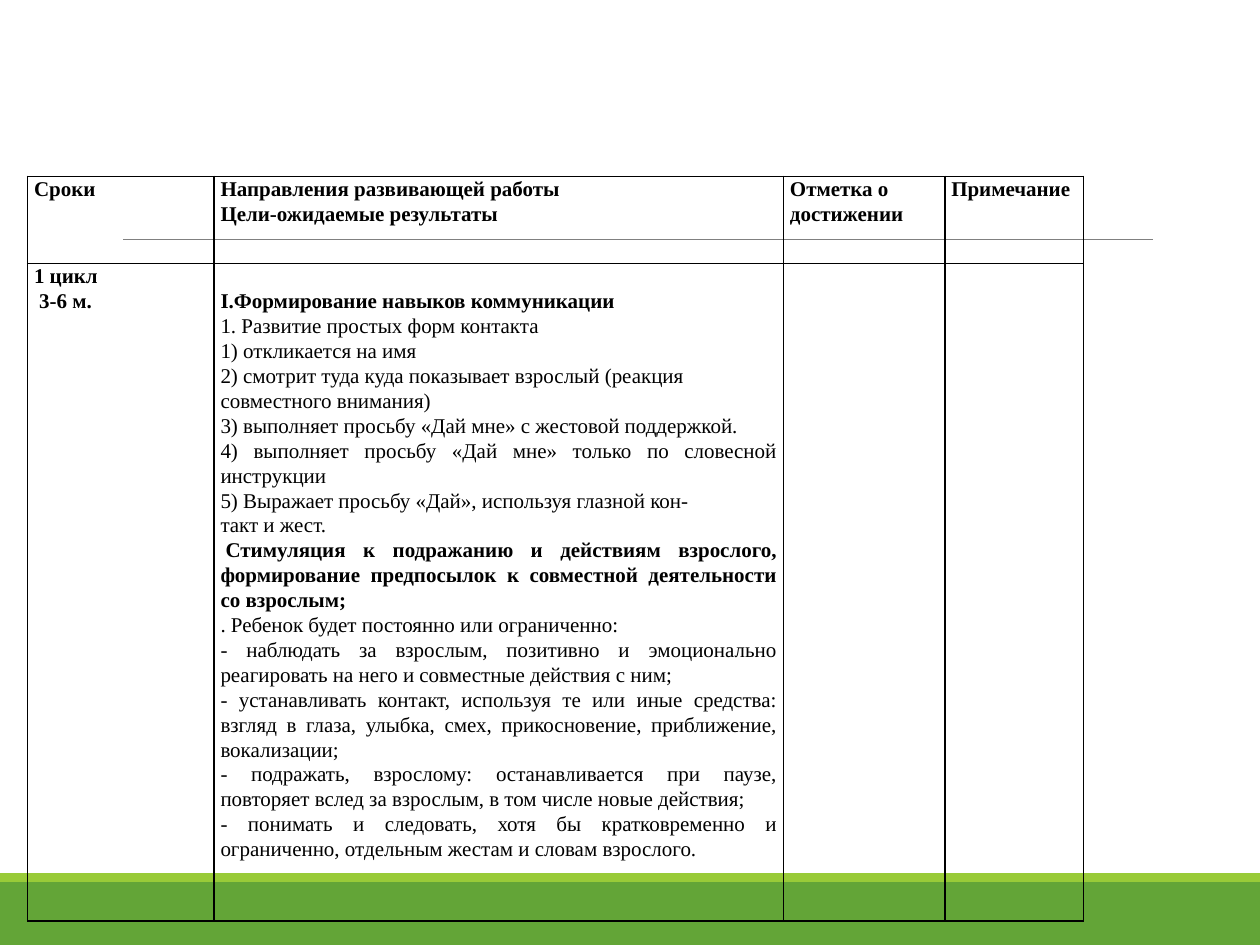
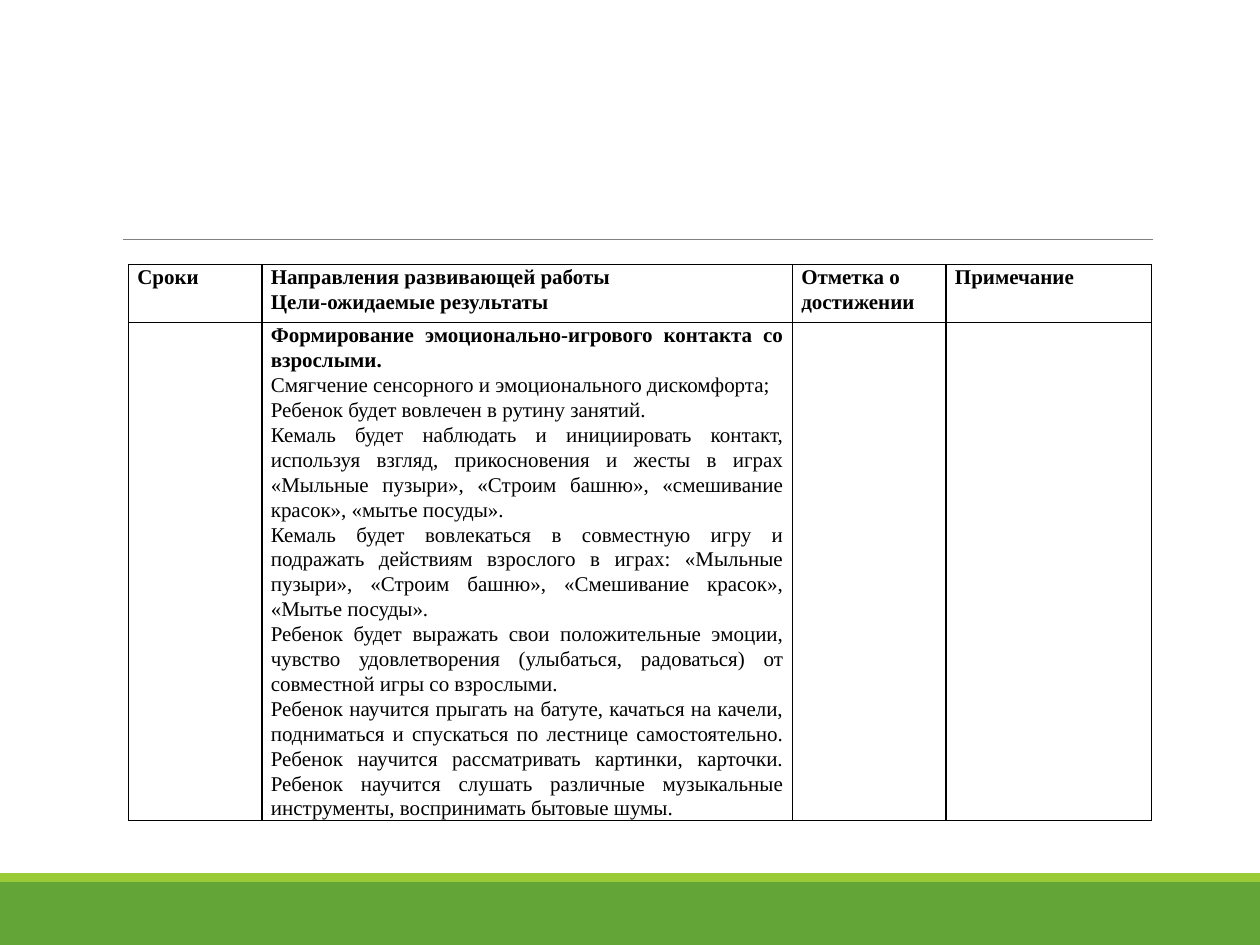
from lxml import etree
from pptx import Presentation
from pptx.dml.color import RGBColor
from pptx.enum.shapes import MSO_CONNECTOR, MSO_SHAPE
from pptx.enum.text import PP_ALIGN
from pptx.oxml.ns import qn
from pptx.util import Inches, Pt

RECTANGLE = MSO_SHAPE.RECTANGLE
STRAIGHT = MSO_CONNECTOR.STRAIGHT
LEFT, JUSTIFY = PP_ALIGN.LEFT, PP_ALIGN.JUSTIFY

COLORS = {"band": "63A537", "stripe": "99CB38", "rule": "808080", "ink": "000000"}
CELL_FONT = {"name": "Times New Roman", "size": Pt(12)}
BLANK_LAYOUT = 6
BORDER_WIDTH = Pt(1)
LINE_SPACING = 1.07
FIRST_LINE_INDENT = Inches(0.04)

HEADER = [
    ["Сроки"],
    ["Направления развивающей работы", "Цели-ожидаемые результаты"],
    ["Отметка о достижении"],
    ["Примечание"],
]

# Paragraphs listed in "bold" are headings, those in "indented" start a little to the right
TABLES = [
    {
        "left": 0.22, "top": 1.4, "side_margin": 0.05, "goals_margin": 0.2,
        "columns": [1.48, 4.52, 1.28, 1.1], "rows": [0.69, 5.22],
        "period": ["1 цикл", "3-6 м."],
        "goals": [
            "I.Формирование навыков коммуникации",
            "1. Развитие простых форм контакта",
            "1) откликается на имя",
            "2) смотрит туда куда показывает взрослый (реакция",
            "совместного внимания)",
            "3) выполняет просьбу «Дай мне» с жестовой поддержкой.",
            "4) выполняет просьбу «Дай мне» только по словесной инструкции",
            "5) Выражает просьбу «Дай», используя глазной кон-",
            "такт и жест.",
            "Стимуляция к подражанию и действиям взрослого, формирование "
            "предпосылок к совместной деятельности со взрослым;",
            ". Ребенок будет постоянно или ограниченно:",
            "- наблюдать за взрослым, позитивно и эмоционально реагировать "
            "на него и совместные действия с ним;",
            "- устанавливать контакт, используя те или иные средства: взгляд в глаза, "
            "улыбка, смех, прикосновение, приближение, вокализации;",
            "- подражать, взрослому: останавливается при паузе, повторяет вслед "
            "за взрослым, в том числе новые действия;",
            "- понимать и следовать, хотя бы кратковременно и ограниченно, "
            "отдельным жестам и словам взрослого.",
        ],
        "bold": [0, 9], "indented": [9],
    },
    {
        "left": 1.02, "top": 2.1, "side_margin": 0.07, "goals_margin": 0,
        "columns": [1.06, 4.21, 1.22, 1.63], "rows": [0.46, 3.95],
        "period": [],
        "goals": [
            "Формирование эмоционально-игрового контакта со взрослыми.",
            "Смягчение сенсорного и эмоционального дискомфорта;",
            "Ребенок будет вовлечен в рутину занятий.",
            "Кемаль будет наблюдать и инициировать контакт, используя взгляд, "
            "прикосновения и жесты в играх «Мыльные пузыри», «Строим башню», "
            "«смешивание красок», «мытье посуды».",
            "Кемаль будет вовлекаться в совместную игру и подражать действиям "
            "взрослого в играх: «Мыльные пузыри», «Строим башню», "
            "«Смешивание красок», «Мытье посуды».",
            "Ребенок будет выражать свои положительные эмоции, чувство удовлетворения "
            "(улыбаться, радоваться) от совместной игры со взрослыми.",
            "Ребенок научится прыгать на батуте, качаться на качели, подниматься и "
            "спускаться по лестнице самостоятельно. Ребенок научится рассматривать "
            "картинки, карточки. Ребенок научится слушать различные музыкальные "
            "инструменты, воспринимать бытовые шумы.",
        ],
        "bold": [0], "indented": [],
    },
]


def fill_cell(cell, texts, alignment, bold, indented):
    """Write one paragraph per text; bold and indented hold paragraph numbers."""
    for number, text in enumerate(texts):
        frame = cell.text_frame
        paragraph = frame.add_paragraph() if number else frame.paragraphs[0]
        paragraph.alignment = alignment
        paragraph.line_spacing = LINE_SPACING
        if number in indented:
            paragraph._p.get_or_add_pPr().set("indent", str(FIRST_LINE_INDENT))
        run = paragraph.add_run()
        run.text = text
        for attribute, value in CELL_FONT.items():
            setattr(run.font, attribute, value)
        run.font.bold = number in bold
        run.font.color.rgb = RGBColor.from_string(COLORS["ink"])


def frame_cell(cell, side_margin):
    """Set margins, thin borders on all sides and no fill."""
    cell.margin_left = cell.margin_right = Inches(side_margin)
    cell.margin_top = cell.margin_bottom = 0
    properties = cell._tc.get_or_add_tcPr()
    for side in ("a:lnL", "a:lnR", "a:lnT", "a:lnB"):
        border = etree.SubElement(properties, qn(side), w=str(BORDER_WIDTH))
        solid = etree.SubElement(border, qn("a:solidFill"))
        etree.SubElement(solid, qn("a:srgbClr"), val=COLORS["ink"])
    cell.fill.background()


presentation = Presentation()
presentation.slide_width, presentation.slide_height = Inches(10), Inches(7.5)
layout = presentation.slide_layouts[BLANK_LAYOUT]
slides = [presentation.slides.add_slide(layout) for _ in TABLES]

# Shared bands and rule, moved from the first slide to the layout
shared = []
for color, top, height in (("band", 7, 0.5), ("stripe", 6.93, 0.07)):
    band = slides[0].shapes.add_shape(
        RECTANGLE, 0, Inches(top), presentation.slide_width, Inches(height))
    band.shadow.inherit = False
    band.fill.solid()
    band.fill.fore_color.rgb = RGBColor.from_string(COLORS[color])
    band.line.fill.background()
    shared.append(band)

rule = slides[0].shapes.add_connector(
    STRAIGHT, Inches(0.98), Inches(1.9), Inches(9.15), Inches(1.9))
rule.line.color.rgb = RGBColor.from_string(COLORS["rule"])
rule.line.width = Pt(0.5)
etree.SubElement(rule._element.spPr, qn("a:effectLst"))
shared.append(rule)

for shape in shared:
    layout.shapes._spTree.append(shape._element)

# One table of goals on each slide
for slide, content in zip(slides, TABLES):
    columns, rows = content["columns"], content["rows"]
    table = slide.shapes.add_table(
        len(rows), len(columns), Inches(content["left"]), Inches(content["top"]),
        Inches(sum(columns)), Inches(sum(rows))).table
    table.first_row = table.horz_banding = False
    for column, width in zip(table.columns, columns):
        column.width = Inches(width)
    for row, height in zip(table.rows, rows):
        row.height = Inches(height)
    for cell in table.iter_cells():
        frame_cell(cell, content["side_margin"])

    # Header row
    for number, texts in enumerate(HEADER):
        fill_cell(table.cell(0, number), texts, LEFT, bold=[0, 1], indented=[])

    # Period and goals
    fill_cell(table.cell(1, 0), content["period"], LEFT, bold=[0, 1], indented=[1])
    goals_cell = table.cell(1, 1)
    goals_cell.margin_top = Inches(content["goals_margin"])
    fill_cell(goals_cell, content["goals"], JUSTIFY, content["bold"], content["indented"])

presentation.save("out.pptx")
